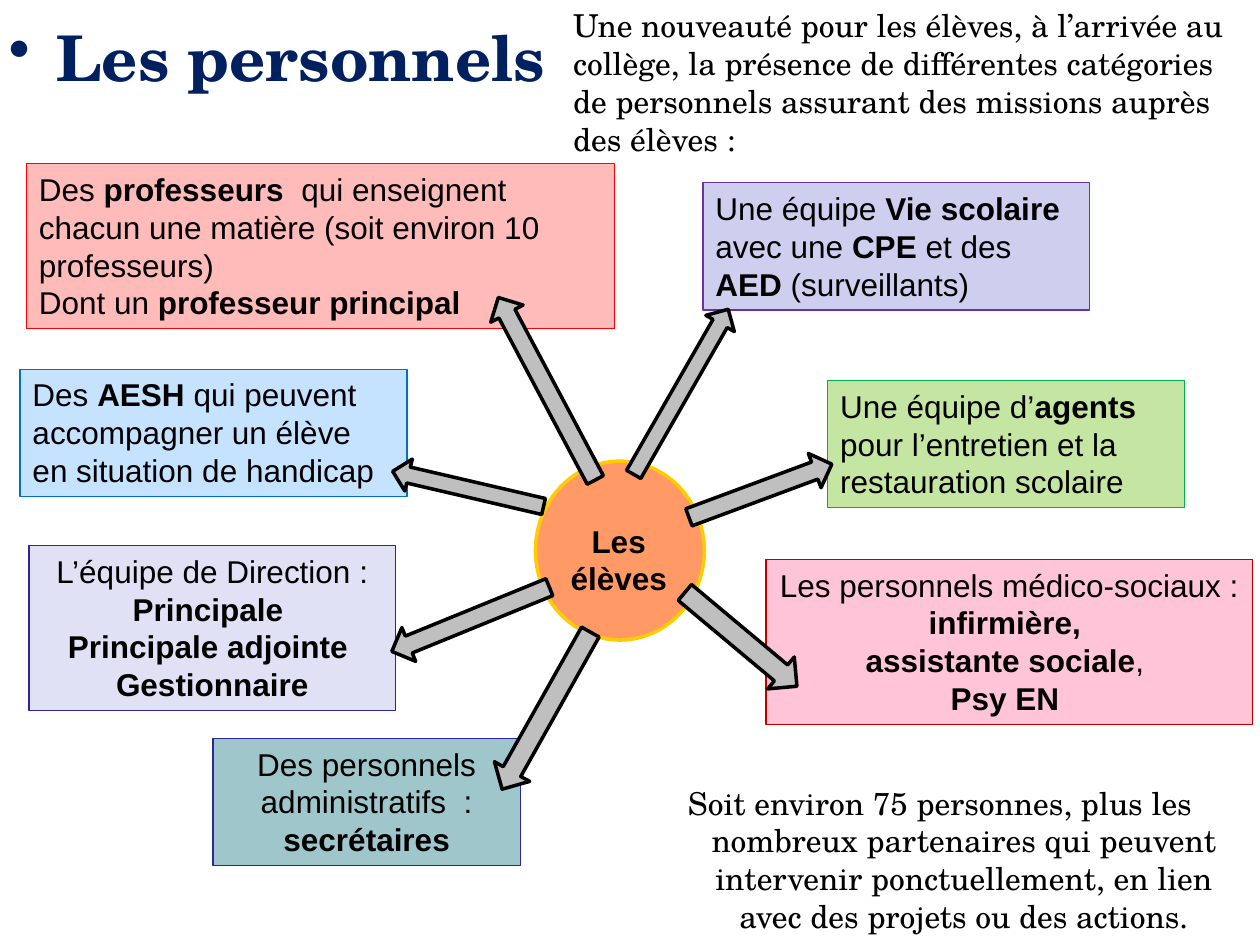
import dataclasses
import typing

import lxml.etree
import pptx
import pptx.dml.color
import pptx.enum.shapes
import pptx.enum.text
import pptx.oxml.ns
import pptx.util

Inches = pptx.util.Inches
Pt = pptx.util.Pt
Shapes = pptx.enum.shapes.MSO_SHAPE
Align = pptx.enum.text.PP_ALIGN
qn = pptx.oxml.ns.qn
HANGING = 0.38


@dataclasses.dataclass(frozen=True)
class Frame:
    left: float
    top: float
    width: float
    height: float

    def lengths(self) -> list[pptx.util.Length]:
        return [Inches(value) for value in dataclasses.astuple(self)]


@dataclasses.dataclass(frozen=True)
class StaffBox:
    frame: Frame
    fill: str
    opacity: int
    line: str
    paragraphs: tuple[str, ...]
    align: Align = Align.LEFT


@dataclasses.dataclass(frozen=True)
class Arrow:
    frame: Frame
    rotation: float


STAFF = [
    StaffBox(Frame(0.21, 1.3, 4.67, 1.31), "FF0000", 27, "FF0000", (
        "Des **professeurs ** qui enseignent chacun une matière (soit environ 10 professeurs)",
        "Dont un **professeur principal**")),
    StaffBox(Frame(5.58, 1.45, 3.07, 1.01), "9C9CDF", 49, "7030A0", (
        "Une équipe **Vie scolaire **avec une **CPE** et des **AED **(surveillants)",)),
    StaffBox(Frame(0.23, 4.33, 2.91, 1.31), "CECEEF", 61, "2C239D", (
        "L’équipe de Direction :", "**Principale **",
        "**Principale adjointe  Gestionnaire**"), Align.CENTER),
    StaffBox(Frame(6.57, 3.02, 2.83, 1.01), "92D050", 53, "00B050", (
        "Une équipe d’**agents** pour l’entretien et la restauration scolaire",)),
    StaffBox(Frame(1.69, 5.86, 2.44, 1.01), "3C8C93", 49, "2C239D", (
        "Des personnels administratifs  :", "**secrétaires**"), Align.CENTER),
    StaffBox(Frame(6.08, 4.44, 3.86, 1.31), "FF6699", 38, "C00000", (
        "Les personnels médico-sociaux : **infirmière, **",
        "**assistante sociale**, ", "**Psy EN **"), Align.CENTER),
    StaffBox(Frame(0.16, 2.93, 3.07, 1.01), "99CCFF", 57, "0070C0", (
        "Des **AESH** qui peuvent accompagner un élève en situation de handicap",)),
]

ARROWS = [
    Arrow(Frame(3.52, 2.94, 1.64, 0.29), 242),
    Arrow(Frame(4.65, 2.98, 1.51, 0.26), 299.8),
    Arrow(Frame(5.43, 3.75, 1.21, 0.29), 339.6),
    Arrow(Frame(5.3, 4.91, 1.16, 0.33), 39.9),
    Arrow(Frame(3.62, 5.48, 1.43, 0.32), 119.3),
    Arrow(Frame(3.06, 4.77, 1.35, 0.29), 157.8),
    Arrow(Frame(3.1, 3.75, 1.23, 0.26), 193.1),
]


def color(value: str) -> pptx.dml.color.RGBColor:
    return pptx.dml.color.RGBColor.from_string(value)


def write_text(box: typing.Any, *paragraphs: str, font: str = "Arial", size: float = 18,
               ink: str = "000000", align: Align = Align.LEFT,
               hanging: float = 0, bullet: str = "", grow: bool = True) -> None:
    frame = box.text_frame
    frame.word_wrap = True
    frame.vertical_anchor = pptx.enum.text.MSO_ANCHOR.TOP
    if grow:
        frame.auto_size = pptx.enum.text.MSO_AUTO_SIZE.SHAPE_TO_FIT_TEXT
    for number, text in enumerate(paragraphs):
        para = frame.add_paragraph() if number else frame.paragraphs[0]
        para.alignment = align
        if hanging:
            properties = para._p.get_or_add_pPr()
            properties.set("marL", str(Inches(hanging)))
            properties.set("indent", str(-Inches(hanging)))
            if bullet:
                lxml.etree.SubElement(properties, qn("a:buChar")).set("char", bullet)
        for index, part in enumerate(text.split("**")):
            if part:
                span = para.add_run()
                span.text = part
                span.font.name = font
                span.font.size = Pt(size)
                span.font.bold = index % 2 == 1
                span.font.color.rgb = color(ink)


def draw_shape(page: typing.Any, kind: Shapes, frame: Frame, fill: str, line: str,
               weight: float = 2, opacity: int = 100) -> typing.Any:
    shape = page.shapes.add_shape(kind, *frame.lengths())
    shape.shadow.inherit = False
    shape.fill.solid()
    shape.fill.fore_color.rgb = color(fill)
    shape.line.color.rgb = color(line)
    shape.line.width = Pt(weight)
    if opacity < 100:
        tint = shape._element.spPr.find(qn("a:solidFill")).find(qn("a:srgbClr"))
        lxml.etree.SubElement(tint, qn("a:alpha")).set("val", str(opacity * 1000))
    return shape


def draw_staff(page: typing.Any, staff: StaffBox) -> None:
    box = draw_shape(page, Shapes.RECTANGLE, staff.frame, staff.fill, staff.line,
                     weight=0.75, opacity=staff.opacity)
    write_text(box, *staff.paragraphs, align=staff.align)


def draw_arrow(page: typing.Any, arrow: Arrow) -> None:
    shape = draw_shape(page, Shapes.RIGHT_ARROW, arrow.frame, "BFBFBF", "000000")
    shape.rotation = arrow.rotation


def add_text(page: typing.Any, frame: Frame, text: str, **style: typing.Any) -> None:
    write_text(page.shapes.add_textbox(*frame.lengths()), text, **style)


def main() -> None:
    deck = pptx.Presentation()
    deck.slide_width, deck.slide_height = Inches(10), Inches(7.5)
    page = deck.slides.add_slide(deck.slide_layouts[6])
    for staff in STAFF:
        draw_staff(page, staff)
    draw_shape(page, Shapes.OVAL, Frame(4.25, 3.66, 1.34, 1.42), "FF9966", "FFCC00")
    add_text(page, Frame(4.32, 4.09, 1.18, 0.71), "**Les élèves**", align=Align.CENTER)
    for arrow in ARROWS:
        draw_arrow(page, arrow)
    serif = "TeX Gyre Schola"
    add_text(page, Frame(-0.03, 0.1, 9, 0.69), "**Les personnels**", font=serif, size=36,
             ink="002060", hanging=HANGING, bullet="•", grow=False)
    add_text(page, Frame(4.45, 0, 5.55, 1.31),
             "Une nouveauté pour les élèves, à l’arrivée au collège, la présence de "
             "différentes catégories de personnels assurant des missions auprès des élèves :",
             font=serif)
    add_text(page, Frame(4.92, 6.17, 5.08, 1.31),
             "Soit environ 75 personnes, plus les nombreux partenaires qui peuvent intervenir "
             "ponctuellement, en lien avec des projets ou des actions.",
             font=serif, align=Align.CENTER, hanging=HANGING)
    deck.save("out.pptx")


if __name__ == "__main__":
    main()
